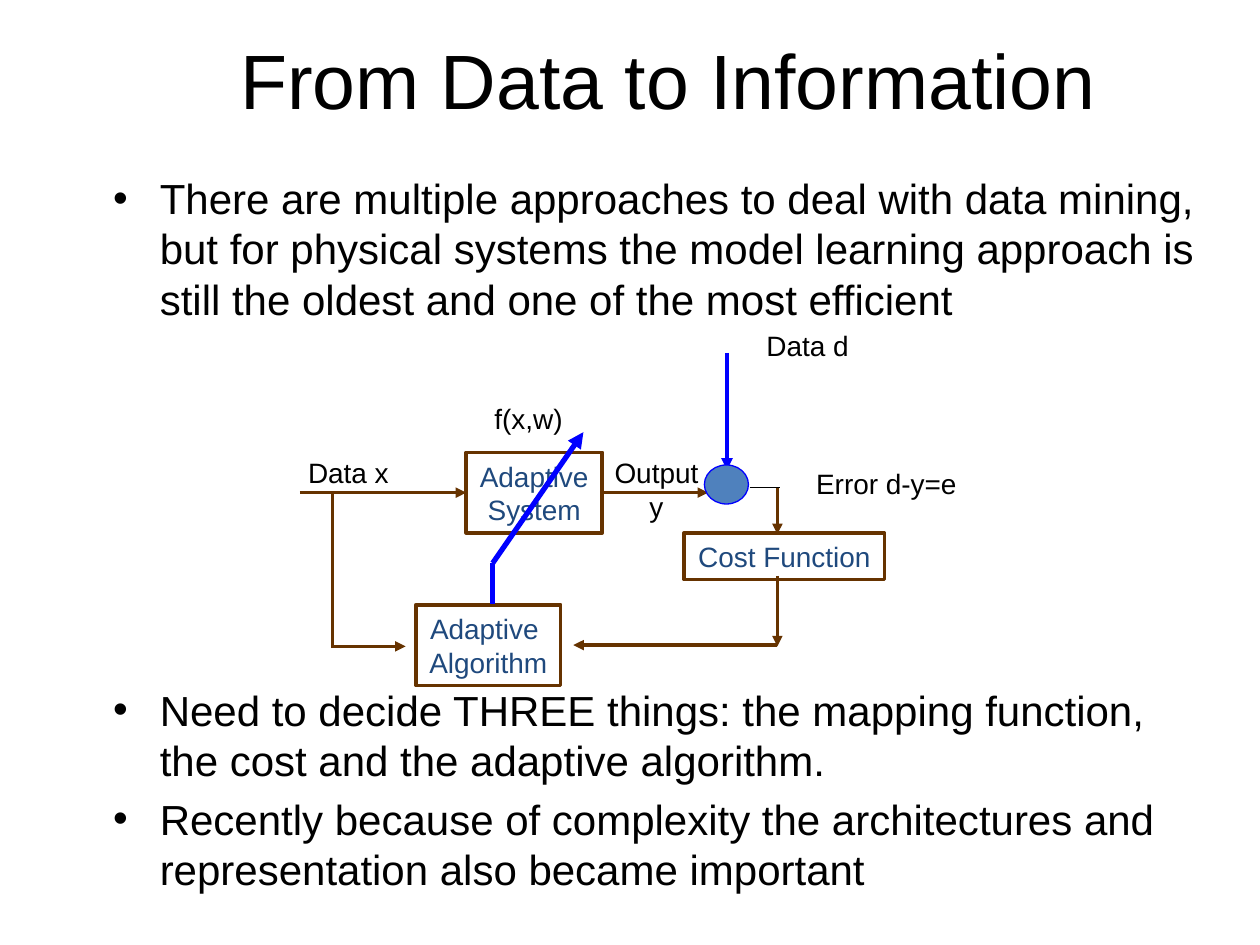
from lxml.etree import SubElement
from pptx import Presentation
from pptx.dml.color import RGBColor
from pptx.enum.shapes import MSO_CONNECTOR, MSO_SHAPE
from pptx.enum.text import MSO_ANCHOR, PP_ALIGN
from pptx.oxml.ns import qn
from pptx.util import Inches, Pt

COLORS = {"black": "000000", "brown": "663300", "blue": "0000FF",
          "navy": "1F497D", "steel": "4F81BD"}
UNIT = Inches(0.1)  # the slide is a grid of 100 columns by 75 rows

prs = Presentation()
prs.slide_width, prs.slide_height = 100 * UNIT, 75 * UNIT
s = prs.slides.add_slide(prs.slide_layouts[6])


def grid(*cells):
    """Turn columns and rows into slide lengths."""
    return [round(c * UNIT) for c in cells]


def write(sp, lines, size, color="black", align=PP_ALIGN.LEFT, wrap=False, bullet=False):
    tf = sp.text_frame
    tf.word_wrap = wrap
    for i, line in enumerate(lines):
        p = tf.paragraphs[0] if i == 0 else tf.add_paragraph()
        p.alignment = align
        if bullet:
            pPr = p._p.get_or_add_pPr()
            pPr.set("marL", str(Inches(0.37)))
            pPr.set("indent", str(-Inches(0.37)))
            if i:
                p.space_before = Pt(0.2 * size)
            SubElement(pPr, qn("a:buFont"), typeface="Arial")
            SubElement(pPr, qn("a:buChar"), char="•")
        r = p.add_run()
        r.text = line
        r.font.name = "Arial"
        r.font.size = Pt(size)
        r.font.color.rgb = RGBColor.from_string(COLORS[color])


# Title
title = s.shapes.add_textbox(*grid(11.4, 0, 85, 12.5))
title.text_frame.vertical_anchor = MSO_ANCHOR.MIDDLE
write(title, ["From Data to Information "], 44, align=PP_ALIGN.CENTER, wrap=True)

# Bullets above and below the diagram
bullets = [
    (13.2, 13, ["There are multiple approaches to deal with data mining, but for physical "
                "systems the model learning approach is still the oldest and one of the "
                "most efficient"]),
    (53.8, 19.7, ["Need to decide THREE things: the mapping function, the cost and the "
                  "adaptive algorithm.",
                  "Recently because of complexity the architectures and representation "
                  "also became important"]),
]
for top, height, lines in bullets:
    body = s.shapes.add_textbox(*grid(8, top, 88.4, height))
    write(body, lines, 24, wrap=True, bullet=True)

# Framed blocks
blocks = [
    (54.3, 42.3, 15.9, 3.7, ["Cost Function"]),
    (37, 35.9, 10.8, 6.4, ["Adaptive", "System"]),
    (33, 48, 11.5, 6.4, ["Adaptive ", "Algorithm"]),
]
for *cell, lines in blocks:
    block = s.shapes.add_shape(MSO_SHAPE.RECTANGLE, *grid(*cell))
    block.shadow.inherit = False
    block.fill.background()
    block.line.color.rgb = RGBColor.from_string(COLORS["brown"])
    block.line.width = Pt(2)
    write(block, lines, 16, "navy", PP_ALIGN.CENTER)

# Signal labels
labels = [
    (23.4, 35.7, 8.5, 3.7, ["Data x"]),
    (47.7, 35.7, 8.8, 6.4, ["Output", "y"]),
    (59.8, 25.6, 8.6, 3.7, ["Data d"]),
    (63.7, 36.5, 13.3, 3.7, ["Error d-y=e"]),
    (38.2, 31.4, 7.5, 3.7, ["f(x,w)"]),
]
for *cell, lines in labels:
    label = s.shapes.add_textbox(*grid(*cell))
    write(label, lines, 16, align=PP_ALIGN.CENTER)

# Signal paths: start, end, colour, width, arrowhead
paths = [
    (47.7, 39.1, 56.2, 39.1, "brown", 2, True),
    (23.8, 39.1, 37, 39.1, "brown", 2, True),
    (61.7, 51.2, 45.5, 51.2, "brown", 2, True),
    (26.4, 39.1, 26.4, 51.3, "brown", 2, False),
    (26.3, 51.3, 32.2, 51.3, "brown", 2, True),
    (39.1, 44.7, 46.3, 34.3, "blue", 3, True),
    (39.1, 47.9, 39.1, 44.7, "blue", 3, False),
    (57.7, 28, 57.7, 37.3, "blue", 2.25, True),
    (59.5, 38.7, 61.9, 38.7, "black", 0.75, False),
    (61.7, 45.7, 61.7, 51.3, "brown", 2, True),
    (61.7, 38.7, 61.7, 42.4, "brown", 2, True),
]
for *ends, color, width, arrow in paths:
    path = s.shapes.add_connector(MSO_CONNECTOR.STRAIGHT, *grid(*ends))
    path.line.color.rgb = RGBColor.from_string(COLORS[color])
    path.line.width = Pt(width)
    if arrow:
        SubElement(path.line._get_or_add_ln(), qn("a:tailEnd"), type="triangle")
    SubElement(path._element.spPr, qn("a:effectLst"))

# Comparison node
node = s.shapes.add_shape(MSO_SHAPE.OVAL, *grid(55.9, 36.9, 3.5, 3.1))
node.shadow.inherit = False
node.fill.solid()
node.fill.fore_color.rgb = RGBColor.from_string(COLORS["steel"])
node.line.color.rgb = RGBColor.from_string(COLORS["blue"])
node.line.width = Pt(0.75)

prs.save("out.pptx")
